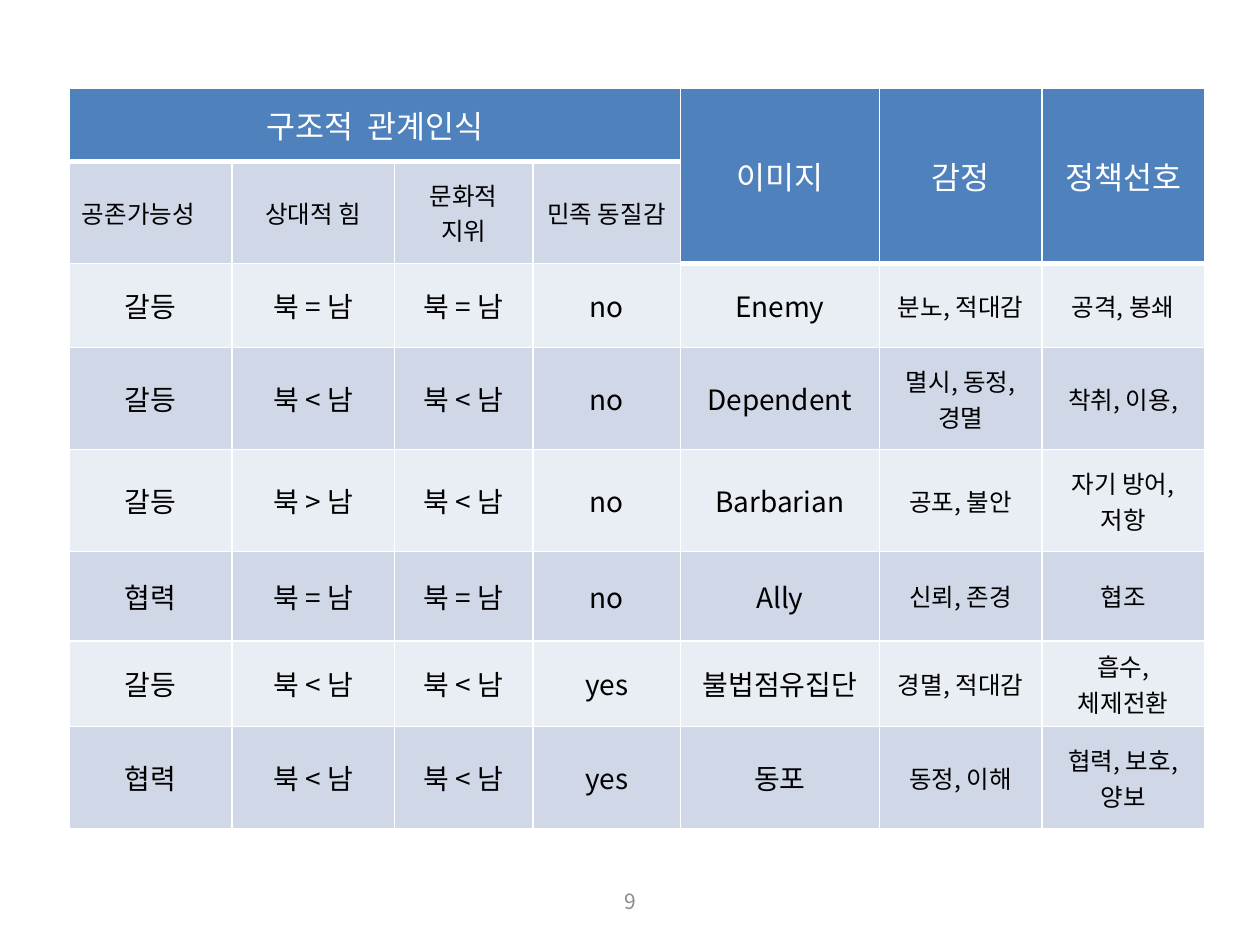
from lxml import etree
from pptx import Presentation
from pptx import util as u
from pptx.dml.color import RGBColor
from pptx.enum import text
from pptx.oxml.ns import qn

FONT = "Noto Sans CJK KR"
HEADER_FILL, DARK_BAND, LIGHT_BAND = "4F81BD", "D0D8E8", "E9EDF4"


def write(frame, words, size, color, align=text.PP_ALIGN.CENTER):
    """Put one run in the frame, with the same face for Latin and Korean."""
    frame.word_wrap = True
    paragraph = frame.paragraphs[0]
    paragraph.alignment = align
    run = paragraph.add_run()
    run.text = words
    for name, value in {"name": FONT, "size": u.Pt(size), "bold": False}.items():
        setattr(run.font, name, value)
    run.font.color.rgb = RGBColor.from_string(color)
    etree.SubElement(run.font._element, qn("a:ea"), typeface=FONT)


def add_borders(cell, widths):
    """Draw white edges; widths maps a side (L, R, T, B) to points."""
    properties = cell._tc.get_or_add_tcPr()
    for side, points in widths.items():
        edge = etree.SubElement(properties, qn(f"a:ln{side}"), w=str(u.Pt(points)))
        fill = etree.SubElement(edge, qn("a:solidFill"))
        etree.SubElement(fill, qn("a:srgbClr"), val="FFFFFF")


relations = ["공존가능성", "상대적 힘", "문화적 지위", "민족 동질감"]
outcomes = ["이미지", "감정", "정책선호"]
cases = [
    ["갈등", "북 = 남", "북 = 남", "no", "Enemy", "분노, 적대감", "공격, 봉쇄"],
    ["갈등", "북 < 남", "북 < 남", "no", "Dependent", "멸시, 동정, 경멸", "착취, 이용,"],
    ["갈등", "북 > 남", "북 < 남", "no", "Barbarian", "공포, 불안", "자기 방어, 저항"],
    ["협력", "북 = 남", "북 = 남", "no", "Ally", "신뢰, 존경", "협조"],
    ["갈등", "북 < 남", "북 < 남", "yes", "불법점유집단", "경멸, 적대감", "흡수, 체제전환"],
    ["협력", "북 < 남", "북 < 남", "yes", "동포", "동정, 이해", "협력, 보호, 양보"],
]
column_widths = [1.29, 1.29, 1.1, 1.17, 1.58, 1.29, 1.29]
row_heights = [0.58, 0.81, 0.58, 0.81, 0.81, 0.71, 0.68, 0.81]

prs = Presentation()
prs.slide_width, prs.slide_height = u.Inches(10), u.Inches(7.5)
slide = prs.slides.add_slide(prs.slide_layouts[6])

table = slide.shapes.add_table(
    len(row_heights), len(column_widths),
    u.Inches(0.55), u.Inches(0.7), u.Inches(9), u.Inches(5.79)).table
for column, width in zip(table.columns, column_widths):
    column.width = u.Inches(width)
for row, height in zip(table.rows, row_heights):
    row.height = u.Inches(height)

# The relations share one heading; each outcome heading covers two rows.
table.cell(0, 0).merge(table.cell(0, 3))
for c in range(4, 7):
    table.cell(0, c).merge(table.cell(1, c))

grid = [["구조적  관계인식", "", "", ""] + outcomes, relations + [""] * 3] + cases
for r, labels in enumerate(grid):
    for c, label in enumerate(labels):
        cell = table.cell(r, c)
        is_header = r == 0 or (r == 1 and c > 3)
        add_borders(cell, {"L": 1, "R": 1, "T": 1, "B": 3 if r == 0 else 1})
        cell.fill.solid()
        band = DARK_BAND if r % 2 else LIGHT_BAND
        cell.fill.fore_color.rgb = RGBColor.from_string(HEADER_FILL if is_header else band)
        cell.vertical_anchor = text.MSO_ANCHOR.MIDDLE
        if not label:
            continue
        size = 18 if is_header else 14 if r == 1 or c > 4 else 16
        align = text.PP_ALIGN.LEFT if (r, c) == (1, 0) else text.PP_ALIGN.CENTER
        write(cell.text_frame, label, size, "FFFFFF" if is_header else "000000", align)

page_number = slide.shapes.add_textbox(
    u.Inches(3.42), u.Inches(6.95), u.Inches(3.17), u.Inches(0.4)).text_frame
page_number.vertical_anchor = text.MSO_ANCHOR.MIDDLE
write(page_number, "9", 12, "8C8C8C")

prs.save("out.pptx")
